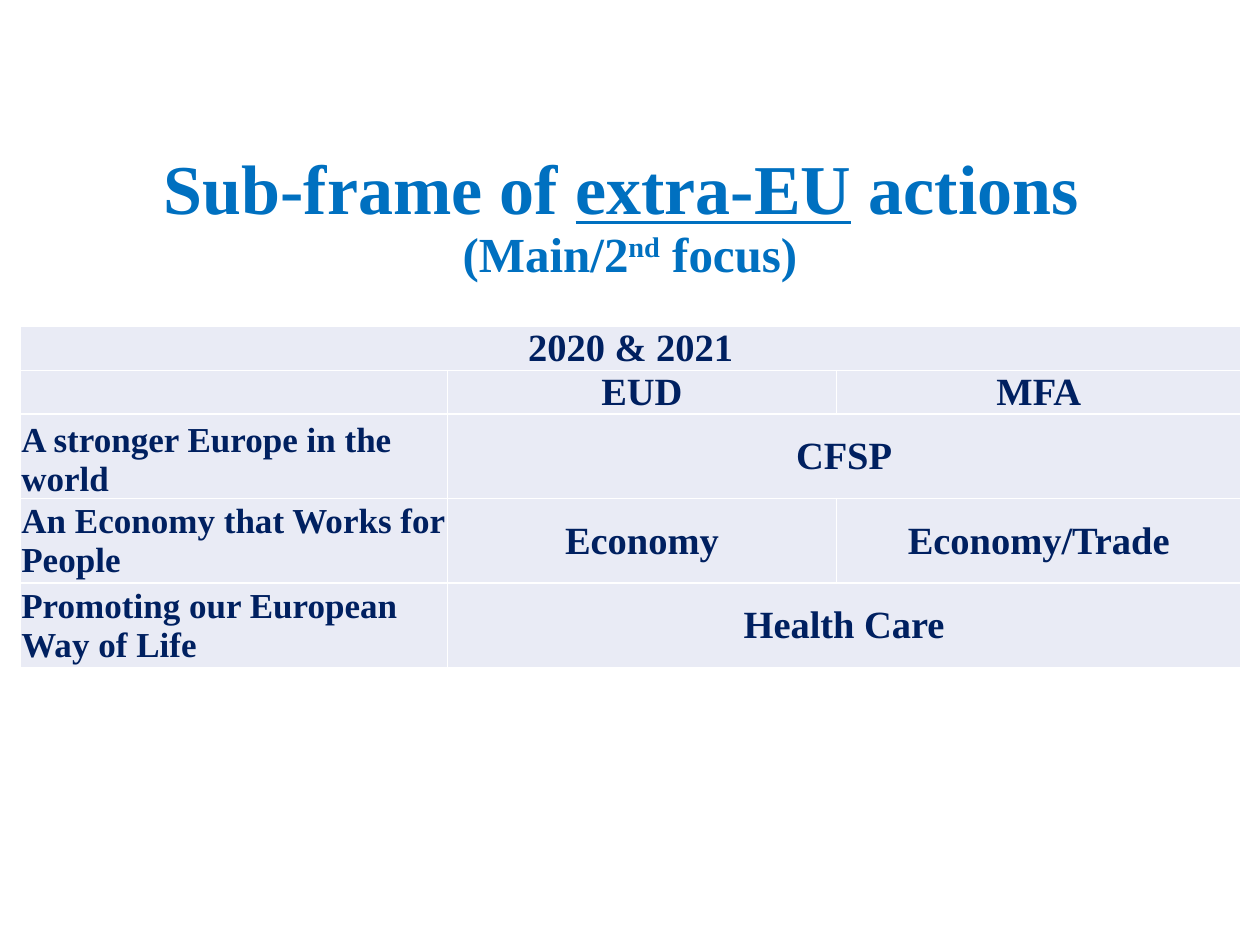
from dataclasses import dataclass

from lxml.etree import SubElement
from pptx import Presentation
from pptx.dml.color import RGBColor as RGB
from pptx.enum.text import MSO_ANCHOR as Anchor, MSO_AUTO_SIZE as AutoSize, PP_ALIGN as Align
from pptx.oxml import parse_xml
from pptx.oxml.ns import nsdecls, qn
from pptx.util import Inches, Pt


@dataclass(frozen=True)
class Theme:
    """Colours, font and type sizes of the slide."""
    font: str = "Times New Roman"
    title: str = "0070C0"
    text: str = "002060"
    cell: str = "E9EBF5"
    border: str = "FFFFFF"
    title_size: int = 40
    subtitle_size: int = 28
    cell_size: int = 22
    label_size: int = 20


THEME = Theme()
WIDTH, HEIGHT = 10, 7.5
COLUMNS = (3.39, 3.09, 3.21)
ROW_UNIT = 0.335
ROW_UNITS = (1, 1, 2, 2, 2)
ROWS = (
    ("2020 & 2021", None, None),
    ("", "EUD", "MFA"),
    ("A stronger Europe in the world", "CFSP", None),
    ("An Economy that Works for People", "Economy", "Economy/Trade"),
    ("Promoting our European Way of Life", "Health Care", None),
)


def add_run(p, text, size, color):
    """Add a bold run in the theme font and return it."""
    r = p.add_run()
    r.text = text
    r.font.name, r.font.size, r.font.bold = THEME.font, Pt(size), True
    r.font.color.rgb = RGB.from_string(color)
    return r


def fill_title(s):
    """Place the title and write its two lines."""
    sp = s.shapes.title
    margin = 0.032 * WIDTH
    sp.left, sp.top = Inches(margin), Inches(1.1)
    sp.width, sp.height = Inches(WIDTH - 2 * margin), Inches(1.27)
    tf = sp.text_frame
    tf.vertical_anchor, tf.auto_size = Anchor.MIDDLE, AutoSize.NONE
    p = tf.paragraphs[0]
    p.alignment, p.line_spacing = Align.CENTER, 0.9
    add_run(p, "Sub-frame of ", THEME.title_size, THEME.title)
    add_run(p, "extra-EU", THEME.title_size, THEME.title).font.underline = True
    add_run(p, " actions ", THEME.title_size, THEME.title)
    p.add_line_break()
    add_run(p, "(Main/2", THEME.subtitle_size, THEME.title)
    r = add_run(p, "nd", THEME.subtitle_size, THEME.title)
    r.font._element.set("baseline", "30000")
    add_run(p, " focus)", THEME.subtitle_size, THEME.title)


def add_borders(cell):
    """Draw a thin line on all four sides of a cell."""
    tc_pr = cell._tc.get_or_add_tcPr()
    for i, side in enumerate("LRTB"):
        ln = parse_xml(f'<a:ln{side} {nsdecls("a")} w="{Pt(1)}"/>')
        fill = SubElement(ln, qn("a:solidFill"))
        SubElement(fill, qn("a:srgbClr")).set("val", THEME.border)
        tc_pr.insert(i, ln)


def format_cell(cell):
    """Set the fill, margins and borders of a cell."""
    cell.fill.solid()
    cell.fill.fore_color.rgb = RGB.from_string(THEME.cell)
    cell.margin_left = cell.margin_right = cell.margin_top = Inches(0.01)
    cell.margin_bottom = 0
    cell.vertical_anchor = Anchor.MIDDLE
    add_borders(cell)


def add_grid(s):
    """Add the table, merging each cell with the open cells to its right."""
    frame = s.shapes.add_table(len(ROWS), len(COLUMNS), Inches(0.16), Inches(2.59),
                               Inches(sum(COLUMNS)), Inches(ROW_UNIT * sum(ROW_UNITS)))
    table = frame.table
    for column, width in zip(table.columns, COLUMNS):
        column.width = Inches(width)
    for i, (units, texts) in enumerate(zip(ROW_UNITS, ROWS)):
        table.rows[i].height = Inches(ROW_UNIT * units)
        for j, text in enumerate(texts):
            cell = table.cell(i, j)
            format_cell(cell)
            if text:
                is_label = j == 0 and i > 0
                p = cell.text_frame.paragraphs[0]
                p.alignment = Align.LEFT if is_label else Align.CENTER
                add_run(p, text, THEME.label_size if is_label else THEME.cell_size, THEME.text)
        if None in texts:
            table.cell(i, texts.index(None) - 1).merge(table.cell(i, len(COLUMNS) - 1))
    table.cell(2, 0).vertical_anchor = Anchor.BOTTOM


def main():
    """Build and save the slide."""
    prs = Presentation()
    prs.slide_width, prs.slide_height = Inches(WIDTH), Inches(HEIGHT)
    s = prs.slides.add_slide(prs.slide_layouts[5])
    fill_title(s)
    add_grid(s)
    prs.save("out.pptx")


if __name__ == "__main__":
    main()
